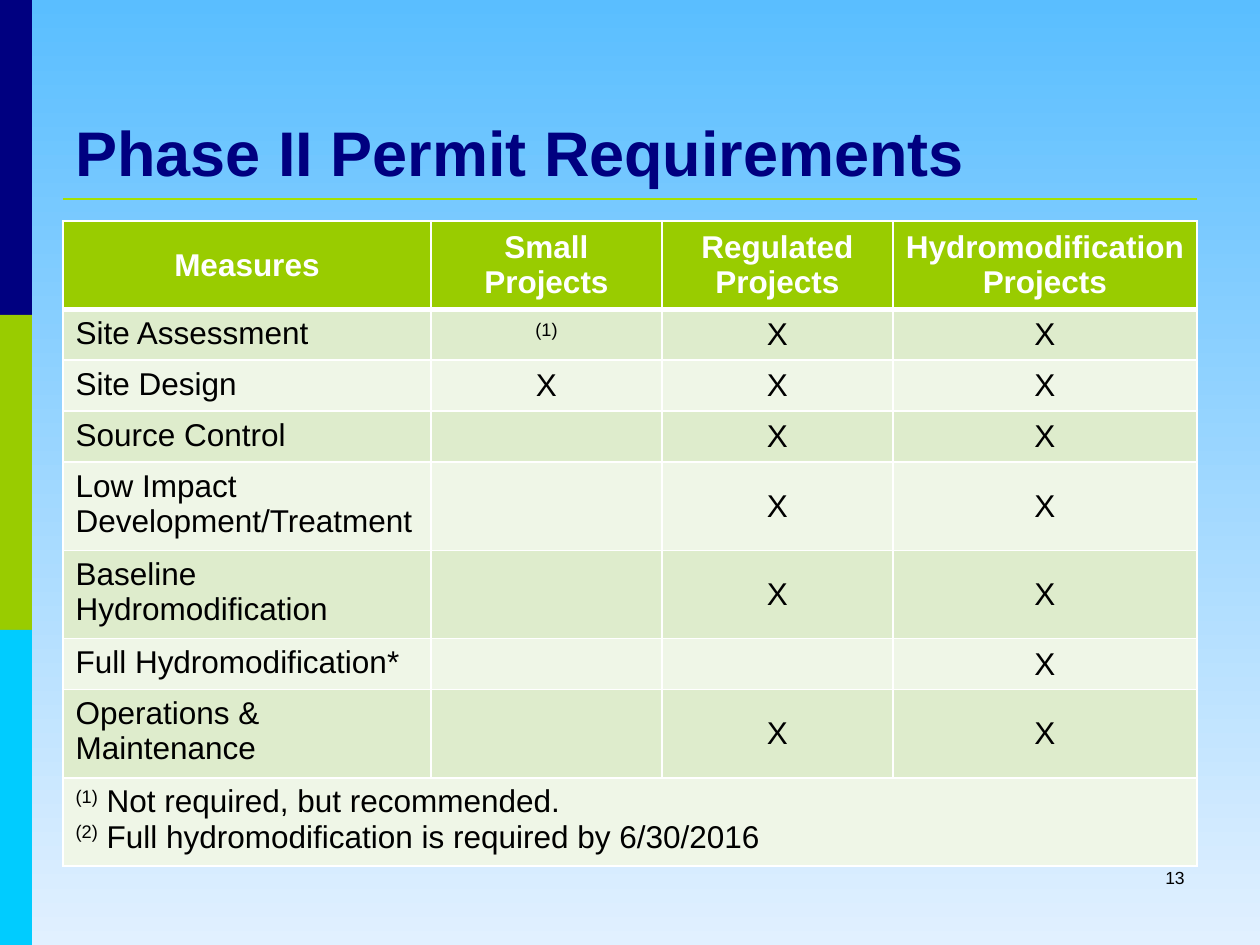
from lxml import etree
from pptx import Presentation
from pptx import util as u
from pptx.dml import color
from pptx.enum import shapes, text
from pptx.oxml import ns

FONT = "Arial"
NAVY, LIME, CYAN, WHITE, BLACK = "000080", "99CC00", "00CCFF", "FFFFFF", "000000"
BANDS = ("DEECCC", "EFF6E7")
COLUMN_WIDTHS = (368, 231, 231, 304)
ROW_HEIGHT = 51
ROWS = (
    ("Measures", "Small Projects", "Regulated Projects", "Hydromodification Projects"),
    ("Site Assessment", "^(1)^", "X", "X"),
    ("Site Design", "X", "X", "X"),
    ("Source Control", "", "X", "X"),
    ("Low Impact Development/Treatment", "", "X", "X"),
    ("Baseline Hydromodification", "", "X", "X"),
    ("Full Hydromodification*", "", "", "X"),
    ("Operations & Maintenance", "", "X", "X"),
    ("^(1)^ Not required, but recommended.\n"
     "^(2)^ Full hydromodification is required by 6/30/2016", "", "", ""),
)


def px(length):
    """Turn pixels at 126 to the inch into EMU."""
    return u.Emu(round(length * 914400 / 126))


def rgb(value):
    """Turn a hex string into a colour."""
    return color.RGBColor.from_string(value)


def write(frame, content, size, ink, bold=False, align=text.PP_ALIGN.LEFT):
    """Write lines into a text frame, raising the parts between carets."""
    for index, line in enumerate(content.split("\n")):
        paragraph = frame.paragraphs[0] if index == 0 else frame.add_paragraph()
        paragraph.alignment = align
        font = paragraph.font
        font.name, font.size, font.bold = FONT, u.Pt(size), bold
        font.color.rgb = rgb(ink)
        for position, part in enumerate(line.split("^")):
            if part:
                run = paragraph.add_run()
                run.text = part
                if position % 2:
                    run._r.get_or_add_rPr().set("baseline", "30000")


def add_text(slide, box, content, size, ink, anchor, **style):
    """Add a wrapping text box."""
    frame = slide.shapes.add_textbox(*map(px, box)).text_frame
    frame.word_wrap = True
    frame.vertical_anchor = anchor
    write(frame, content, size, ink, **style)


def set_background(slide):
    """Fill the slide with a vertical sky gradient."""
    fill = slide.background.fill
    fill.gradient()
    fill.gradient_angle = 270
    for stop, value in zip(fill.gradient_stops, ("5ABEFF", "E1F0FF")):
        stop.color.rgb = rgb(value)


def add_side_bar(slide, left, top, width, height):
    """Stack equal colour blocks down the given box."""
    block = height // 3
    for index, value in enumerate((NAVY, LIME, CYAN)):
        shape = slide.shapes.add_shape(
            shapes.MSO_SHAPE.RECTANGLE,
            px(left), px(top + index * block), px(width), px(block))
        shape.shadow.inherit = False
        shape.fill.solid()
        shape.fill.fore_color.rgb = rgb(value)
        shape.line.fill.background()


def add_heading(slide, left, top, width, height):
    """Add the title and the rule just below it."""
    add_text(slide, (left, top, width, height), "Phase II Permit Requirements",
             36, NAVY, text.MSO_ANCHOR.BOTTOM, bold=True)
    rule_top = px(top + height + 4)
    rule = slide.shapes.add_connector(
        shapes.MSO_CONNECTOR.STRAIGHT, px(left), rule_top, px(left + width), rule_top)
    rule.line.color.rgb = rgb("A5E100")
    rule.line.width = u.Pt(1)
    etree.SubElement(rule._element.spPr, ns.qn("a:effectLst"))


def set_borders(cell, **widths):
    """Draw white cell borders, one point wide unless a side says otherwise."""
    properties = cell._tc.get_or_add_tcPr()
    for side in "LRTB":
        line = etree.SubElement(properties, ns.qn(f"a:ln{side}"),
                                w=str(u.Pt(widths.get(side, 1))))
        fill = etree.SubElement(line, ns.qn("a:solidFill"))
        etree.SubElement(fill, ns.qn("a:srgbClr"), val=WHITE)


def add_measures_table(slide, left, top):
    """Add the table of measures by project type, ending in merged notes."""
    table = slide.shapes.add_table(
        len(ROWS), len(COLUMN_WIDTHS), px(left), px(top),
        px(sum(COLUMN_WIDTHS)), px(ROW_HEIGHT * len(ROWS))).table
    table.first_row = table.horz_banding = False
    for column, width in zip(table.columns, COLUMN_WIDTHS):
        column.width = px(width)
    for row_index, values in enumerate(ROWS):
        table.rows[row_index].height = px(ROW_HEIGHT)
        header = row_index == 0
        for column_index, value in enumerate(values):
            cell = table.cell(row_index, column_index)
            set_borders(cell, **{0: {"B": 3}, 1: {"T": 3}}.get(row_index, {}))
            cell.fill.solid()
            cell.fill.fore_color.rgb = rgb(LIME if header else BANDS[(row_index - 1) % 2])
            centred = header or column_index > 0
            cell.vertical_anchor = text.MSO_ANCHOR.MIDDLE if centred else text.MSO_ANCHOR.TOP
            write(cell.text_frame, value, 18, WHITE if header else BLACK, bold=header,
                  align=text.PP_ALIGN.CENTER if centred else text.PP_ALIGN.LEFT)
    last = len(ROWS) - 1
    table.cell(last, 0).merge(table.cell(last, len(COLUMN_WIDTHS) - 1))


def main():
    """Build and save the slide."""
    presentation = Presentation()
    presentation.slide_width, presentation.slide_height = px(1260), px(945)
    slide = presentation.slides.add_slide(presentation.slide_layouts[6])
    set_background(slide)
    add_side_bar(slide, 0, 0, 32, 945)
    add_heading(slide, 63, 38, 1134, 157)
    add_measures_table(slide, 63, 221)
    add_text(slide, (903, 861, 294, 63), "13", 10, BLACK,
             text.MSO_ANCHOR.TOP, align=text.PP_ALIGN.RIGHT)
    presentation.save("out.pptx")


if __name__ == "__main__":
    main()
